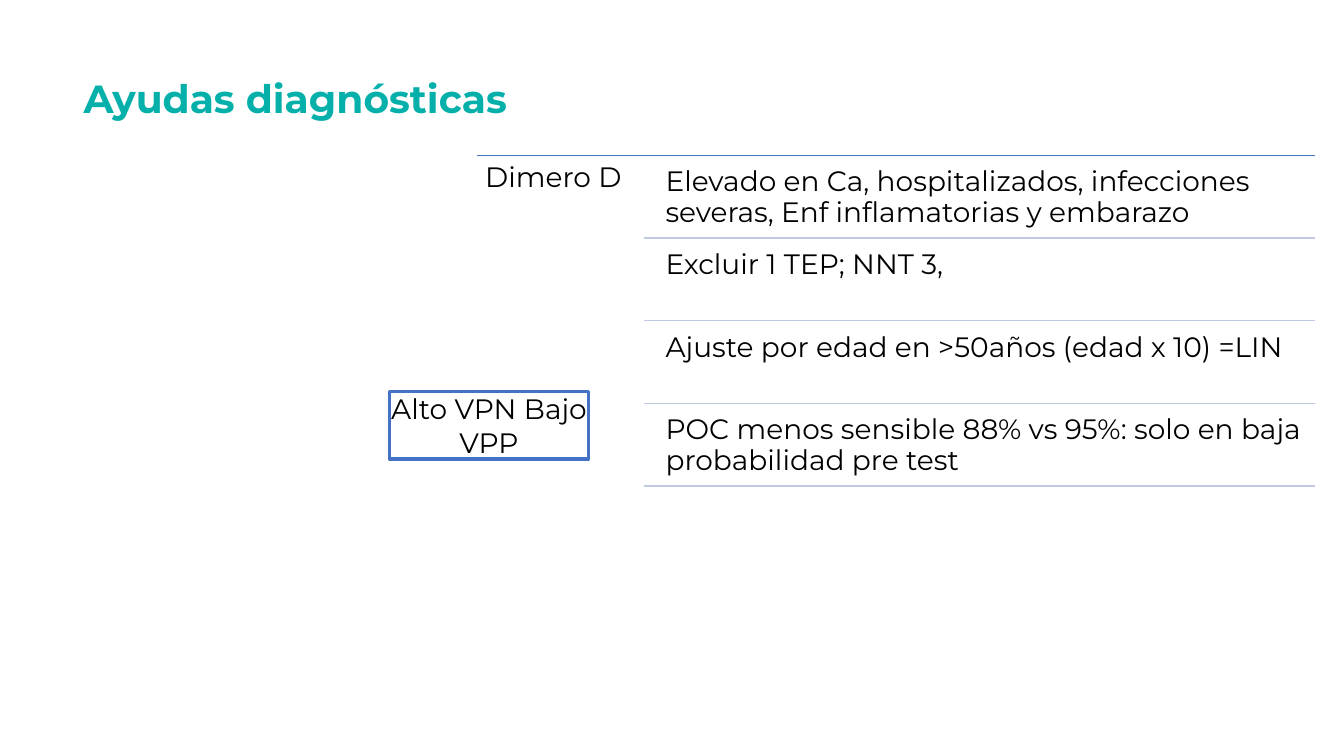
from lxml import etree
from pptx import Presentation
from pptx.dml.color import RGBColor
from pptx.enum.shapes import MSO_CONNECTOR, MSO_SHAPE
from pptx.enum.text import MSO_ANCHOR, PP_ALIGN
from pptx.oxml.ns import qn
from pptx.util import Pt

STRAIGHT = MSO_CONNECTOR.STRAIGHT
RECTANGLE = MSO_SHAPE.RECTANGLE
TOP, MIDDLE = MSO_ANCHOR.TOP, MSO_ANCHOR.MIDDLE
LEFT, CENTER = PP_ALIGN.LEFT, PP_ALIGN.CENTER

FONT = "Montserrat"
COLORS = {"title": "06B0AA", "text": "000000", "accent": "4472C4", "divider": "C1C9E4"}

# Layout of the list, in points
LIST_LEFT, LIST_RIGHT, LIST_TOP = 340.6, 939.6, 110.9
DIVIDER_LEFT, FINDING_LEFT = 460.1, 469.4
ROW_STEP, ROW_GAP = 59.04, 2.9
INSET = 6

FINDINGS = [
    "Elevado en Ca, hospitalizados, infecciones severas, Enf inflamatorias y embarazo",
    "Excluir 1 TEP; NNT 3,",
    "Ajuste por edad en >50años (edad x 10) =LIN",
    "POC menos sensible 88% vs 95%: solo en baja probabilidad pre test",
]


def color(name):
    return RGBColor.from_string(COLORS[name])


def write(shape, text, *, size=20, ink="text", bold=False, align=LEFT,
          anchor=TOP, inset=(INSET, INSET), spacing=0.9):
    frame = shape.text_frame
    frame.word_wrap = True
    frame.vertical_anchor = anchor
    frame.margin_left = frame.margin_right = Pt(inset[0])
    frame.margin_top = frame.margin_bottom = Pt(inset[1])
    paragraph = frame.paragraphs[0]
    paragraph.alignment = align
    paragraph.line_spacing = spacing
    run = paragraph.add_run()
    run.text = text
    run.font.name = FONT
    run.font.size = Pt(size)
    run.font.bold = bold
    run.font.color.rgb = color(ink)


def add_label(slide, text, left, top, width, height, **style):
    label = slide.shapes.add_textbox(Pt(left), Pt(top), Pt(width), Pt(height))
    write(label, text, **style)


def add_rule(slide, left, top, ink):
    rule = slide.shapes.add_connector(STRAIGHT, Pt(left), Pt(top), Pt(LIST_RIGHT), Pt(top))
    rule.line.color.rgb = color(ink)
    rule.line.width = Pt(1)
    etree.SubElement(rule._element.spPr, qn("a:effectLst"))


def add_outlined_box(slide, text, left, top, width, height):
    box = slide.shapes.add_shape(RECTANGLE, Pt(left), Pt(top), Pt(width), Pt(height))
    box.shadow.inherit = False
    box.fill.background()
    box.line.color.rgb = color("accent")
    box.line.width = Pt(2.25)
    write(box, text, align=CENTER, anchor=MIDDLE, inset=(0, 0), spacing=1.0)


def main():
    prs = Presentation()
    prs.slide_width, prs.slide_height = Pt(960), Pt(540)
    slide = prs.slides.add_slide(prs.slide_layouts[6])

    # Test name under the heading rule
    add_rule(slide, LIST_LEFT, LIST_TOP, "accent")
    add_label(slide, "Dimero D", LIST_LEFT, LIST_TOP,
              DIVIDER_LEFT - LIST_LEFT, ROW_STEP * len(FINDINGS) + ROW_GAP)

    # Findings, each closed by a divider
    for row, finding in enumerate(FINDINGS):
        row_top = LIST_TOP + row * ROW_STEP
        add_label(slide, finding, FINDING_LEFT, row_top + ROW_GAP,
                  LIST_RIGHT - FINDING_LEFT, ROW_STEP - ROW_GAP)
        add_rule(slide, DIVIDER_LEFT, row_top + ROW_STEP, "divider")

    # Predictive values
    add_outlined_box(slide, "Alto VPN Bajo VPP", 278, 279.4, 142.6, 48.5)

    # Title
    add_label(slide, "Ayudas diagnósticas", 52.6, 33.8, 855.4, 77, size=28,
              ink="title", bold=True, anchor=MIDDLE, inset=(7.2, 3.6))

    prs.save("out.pptx")


if __name__ == "__main__":
    main()
